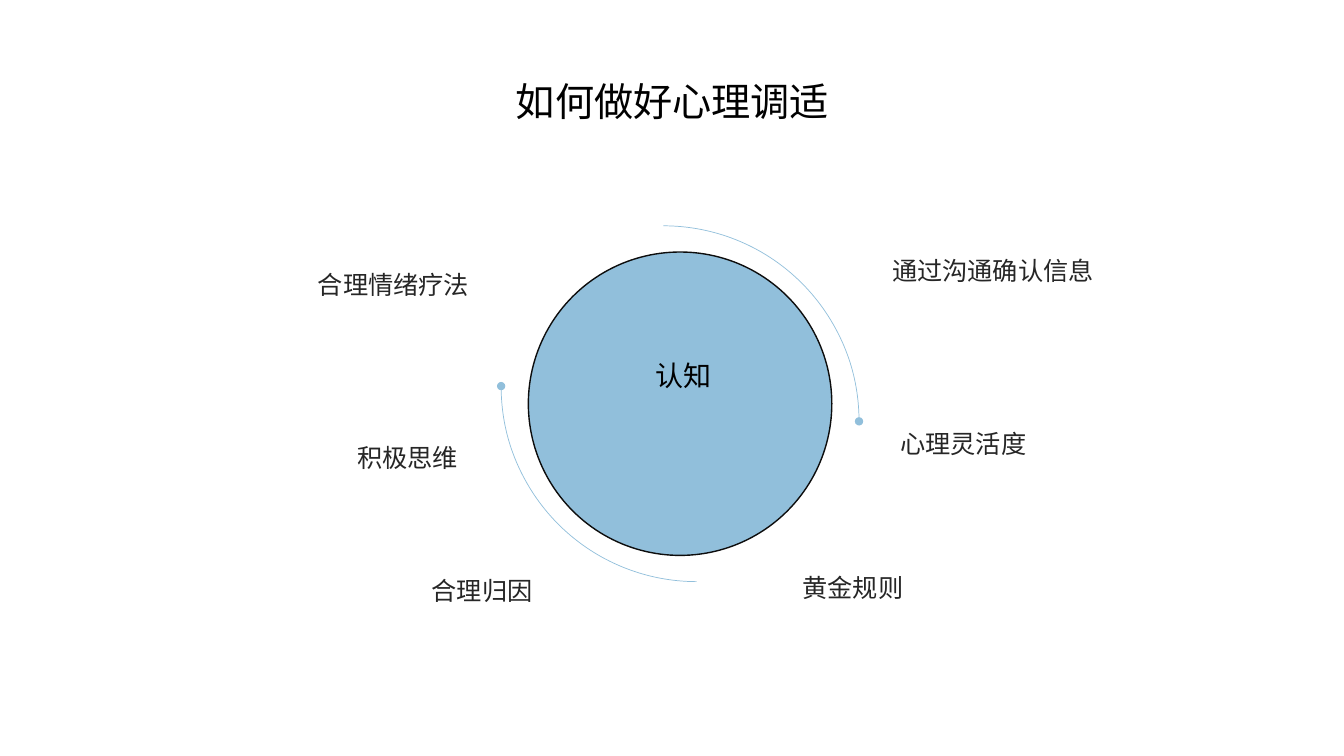
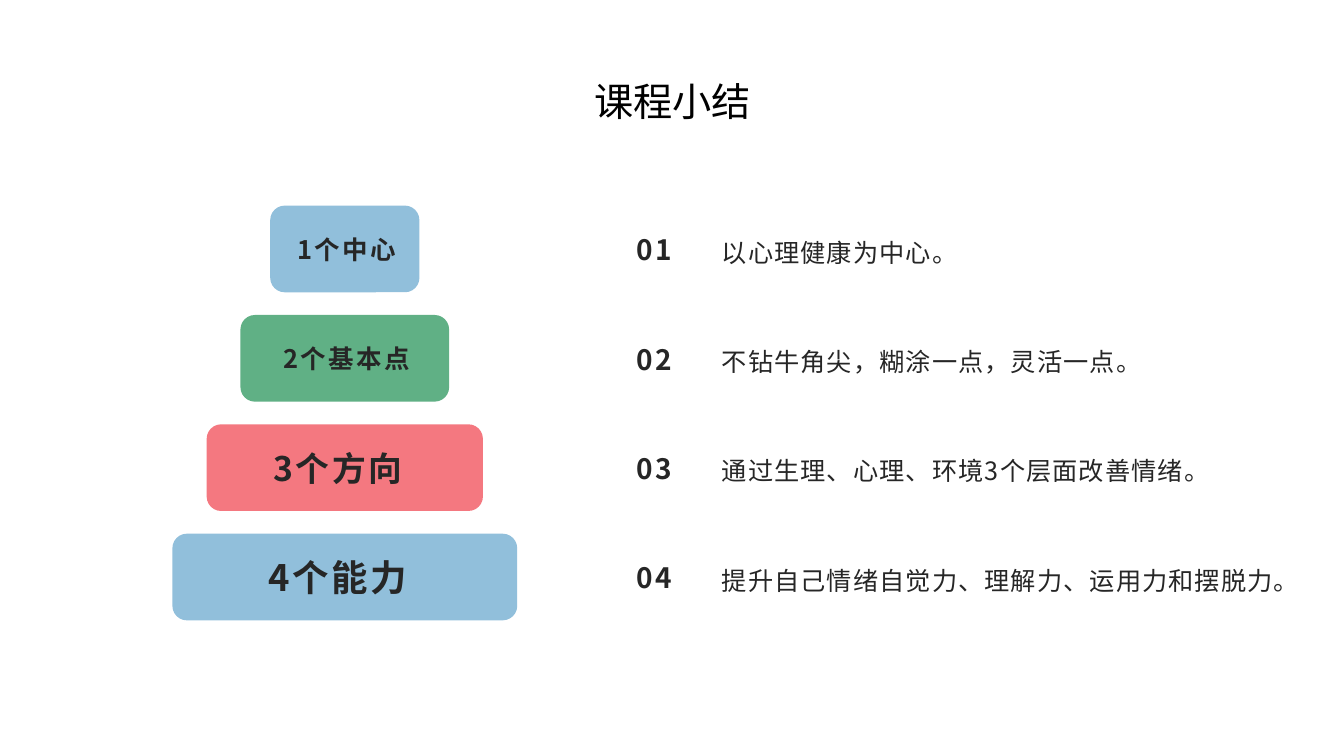
"""Build two slides on psychological adjustment: a cognition circle and a course summary."""
import pptx
import pptx.util
import pptx.dml.color
import pptx.enum.shapes
import pptx.enum.text
import pptx.oxml
import pptx.oxml.ns

Inches = pptx.util.Inches
Pt = pptx.util.Pt
RGBColor = pptx.dml.color.RGBColor
SHAPE = pptx.enum.shapes.MSO_SHAPE
ALIGN = pptx.enum.text.PP_ALIGN
ANCHOR = pptx.enum.text.MSO_ANCHOR
AUTO_SIZE = pptx.enum.text.MSO_AUTO_SIZE

FONT = "Noto Sans CJK SC"
BLACK = RGBColor(0x00, 0x00, 0x00)
INK = RGBColor(0x26, 0x26, 0x26)
OUTLINE = RGBColor(0x0D, 0x0D, 0x0D)
BLUE = RGBColor(0x91, 0xBF, 0xDB)
GREEN = RGBColor(0x60, 0xB0, 0x85)
RED = RGBColor(0xF4, 0x78, 0x80)

ADJUST_TITLE = "如何做好心理调适"
CORE = "认知"
METHODS = [
    ("合理情绪疗法", (2.06, 2.47, 2.69, 0.51), ALIGN.RIGHT),
    ("积极思维", (2.17, 4.19, 2.47, 0.51), ALIGN.RIGHT),
    ("合理归因", (4.1, 5.51, 1.28, 0.51), ALIGN.RIGHT),
    ("通过沟通确认信息", (8.75, 2.33, 2.34, 0.51), ALIGN.LEFT),
    ("心理灵活度", (8.83, 4.05, 2.45, 0.51), ALIGN.LEFT),
    ("黄金规则", (7.86, 5.48, 2.45, 0.51), ALIGN.LEFT),
]
ARC_SIZE = 3.88
ARCS = [(4.64, 2.24, 0), (4.97, 1.89, 180)]

SUMMARY_TITLE = "课程小结"
LEVELS = [
    dict(label="1个中心", point="以心理健康为中心。", color=BLUE,
         width=1.48, size=18.2, spacing=0.8, label_center=3.44, label_drop=0.15),
    dict(label="2个基本点", point="不钻牛角尖，糊涂一点，灵活一点。", color=GREEN,
         width=2.07, size=18.2, spacing=0.8, label_center=3.44, label_drop=0.15),
    dict(label="3个方向", point="通过生理、心理、环境3个层面改善情绪。", color=RED,
         width=2.74, size=24.1, spacing=1, label_center=3.35, label_drop=0.12),
    dict(label="4个能力", point="提升自己情绪自觉力、理解力、运用力和摆脱力。", color=BLUE,
         width=3.42, size=26, spacing=1, label_center=3.35, label_drop=0.12),
]
PYRAMID_CENTER = 3.42
PYRAMID_TOP = 2.04
LEVEL_STEP = 1.085
LEVEL_HEIGHT = 0.86
LABEL_WIDTH = 1.94


def add_text(slide, box, text, size, color=INK, align=ALIGN.LEFT, line_spacing=None,
             bold=None, tracking=None, after=None, middle=False):
    area = slide.shapes.add_textbox(*map(Inches, box))
    frame = area.text_frame
    frame.word_wrap = True
    if middle:
        frame.vertical_anchor = ANCHOR.MIDDLE
    else:
        frame.auto_size = AUTO_SIZE.SHAPE_TO_FIT_TEXT
    paragraph = frame.paragraphs[0]
    paragraph.text = text
    paragraph.alignment = align
    paragraph.line_spacing = line_spacing
    if after:
        paragraph.space_after = Pt(after)
    font = paragraph.font
    font.size = Pt(size)
    font.bold = bold
    font.color.rgb = color
    font.name = FONT
    properties = font._element
    east_asian = pptx.oxml.parse_xml(f'<a:ea {pptx.oxml.ns.nsdecls("a")} typeface="{FONT}"/>')
    properties.find(pptx.oxml.ns.qn("a:latin")).addnext(east_asian)
    if tracking:
        properties.set("spc", str(round(tracking * 100)))
    return frame


def add_shape(slide, kind, box, fill=None, line=None, line_width=1):
    shape = slide.shapes.add_shape(kind, *map(Inches, box))
    shape.shadow.inherit = False
    if fill is None:
        shape.fill.background()
    else:
        shape.fill.solid()
        shape.fill.fore_color.rgb = fill
    if line is None:
        shape.line.fill.background()
    else:
        shape.line.color.rgb = line
        shape.line.width = Pt(line_width)
    return shape


def add_slide(deck, title):
    slide = deck.slides.add_slide(deck.slide_layouts[6])
    add_text(slide, (4.68, 0.72, 3.98, 0.57), title, 28, BLACK, ALIGN.CENTER)
    return slide


def build_adjustment(deck):
    slide = add_slide(deck, ADJUST_TITLE)
    for method, box, align in METHODS:
        add_text(slide, box, method, 18, align=align, line_spacing=1.5)
    add_shape(slide, SHAPE.OVAL, (5.24, 2.5, 3.01, 3.01), BLUE, OUTLINE)
    for left, top, rotation in ARCS:
        arc = add_shape(slide, SHAPE.ARC, (left, top, ARC_SIZE, ARC_SIZE),
                        line=BLUE, line_width=0.5)
        arc.rotation = rotation
        dot = pptx.oxml.parse_xml(f'<a:tailEnd {pptx.oxml.ns.nsdecls("a")} type="oval"/>')
        arc.line._get_or_add_ln().append(dot)
    add_text(slide, (5.87, 3.34, 1.82, 0.55), CORE, 20, BLACK, ALIGN.CENTER, 1.5)


def build_summary(deck):
    slide = add_slide(deck, SUMMARY_TITLE)
    for index, level in enumerate(LEVELS):
        top = PYRAMID_TOP + index * LEVEL_STEP
        width = level["width"]
        add_shape(slide, SHAPE.ROUNDED_RECTANGLE,
                  (PYRAMID_CENTER - width / 2, top, width, LEVEL_HEIGHT), level["color"])
        label_box = (level["label_center"] - LABEL_WIDTH / 2, top + level["label_drop"],
                     LABEL_WIDTH, 0.62)
        add_text(slide, label_box, level["label"], level["size"], align=ALIGN.CENTER,
                 line_spacing=level["spacing"], bold=True, tracking=1.8, after=8, middle=True)
        add_text(slide, (6.16, top + 0.16, 0.66, 0.55), f"{index + 1:02}", 20,
                 align=ALIGN.CENTER, bold=True, tracking=1.2, after=8, middle=True)
        add_text(slide, (7.06, top + 0.05, 5.95, 0.76), level["point"], 18,
                 line_spacing=1.2, tracking=0.8, after=8, middle=True)


def main():
    deck = pptx.Presentation()
    deck.slide_width = Inches(13.33)
    deck.slide_height = Inches(7.5)
    build_adjustment(deck)
    build_summary(deck)
    deck.save("out.pptx")


if __name__ == "__main__":
    main()
